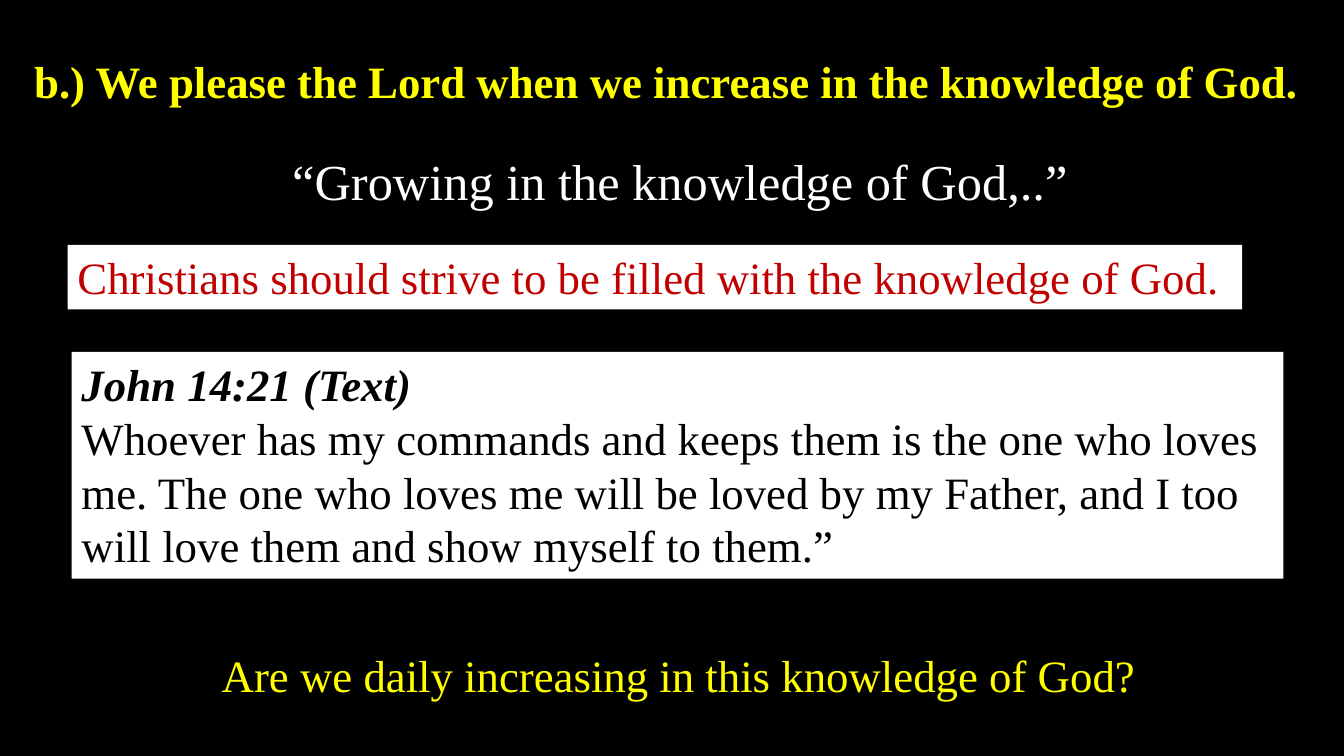
from pptx import Presentation
from pptx import util as u
from pptx.dml.color import RGBColor
from pptx.enum import shapes, text

COLORS = {"black": "000000", "white": "FFFFFF", "yellow": "FFFF00", "red": "C00000"}
FONT = "Times New Roman"


def rgb(name):
    """Return the named colour."""
    return RGBColor.from_string(COLORS[name])


def write(sp, paragraphs, color, wrap, size=32):
    """Fill a shape with left-aligned paragraphs of (wording, font format)."""
    tf = sp.text_frame
    frame = {"word_wrap": wrap, "auto_size": text.MSO_AUTO_SIZE.SHAPE_TO_FIT_TEXT,
             "vertical_anchor": text.MSO_ANCHOR.TOP}
    for key, value in frame.items():
        setattr(tf, key, value)
    for i, (wording, extra) in enumerate(paragraphs):
        p = tf.paragraphs[0] if i == 0 else tf.add_paragraph()
        p.alignment = text.PP_ALIGN.LEFT
        r = p.add_run()
        r.text = wording
        for key, value in {"name": FONT, "size": u.Pt(size), **extra}.items():
            setattr(r.font, key, value)
        r.font.color.rgb = rgb(color)


def add_line(s, box, wording, color, size=32, **extra):
    """Place one unwrapped line of text on the background."""
    sp = s.shapes.add_textbox(*map(u.Inches, box))
    write(sp, [(wording, extra)], color, False, size)


def add_panel(s, box, paragraphs, color):
    """Place a white panel holding wrapped paragraphs."""
    sp = s.shapes.add_shape(shapes.MSO_SHAPE.RECTANGLE, *map(u.Inches, box))
    sp.shadow.inherit = False
    sp.fill.solid()
    sp.fill.fore_color.rgb = rgb("white")
    sp.line.fill.background()
    write(sp, paragraphs, color, True)


def build_verse_slide(prs):
    """Build the slide with heading, quotation, two panels and closing question."""
    s = prs.slides.add_slide(prs.slide_layouts[6])
    s.background.fill.solid()
    s.background.fill.fore_color.rgb = rgb("black")
    add_line(s, (0.24, 0.48, 12.96, 0.64),
             "b.) We please the Lord when we increase in the knowledge of God.",
             "yellow", bold=True)
    add_line(s, (2.8, 1.44, 7.95, 0.71),
             "“Growing in the knowledge of God,..”", "white", 36)
    add_panel(s, (0.67, 2.43, 11.65, 0.64),
              [("Christians should strive to be filled with the knowledge of God.", {})],
              "red")
    add_line(s, (2.1, 6.38, 9.35, 0.64),
             "Are we daily increasing in this knowledge of God?", "yellow")
    add_panel(s, (0.71, 3.49, 12.02, 2.25),
              [("John 14:21 (Text)", {"bold": True, "italic": True}),
               ("Whoever has my commands and keeps them is the one who loves me. "
                "The one who loves me will be loved by my Father, and I too will "
                "love them and show myself to them.”", {})],
              "black")


def main():
    """Create and save the presentation."""
    prs = Presentation()
    prs.slide_width, prs.slide_height = u.Inches(13.33), u.Inches(7.5)
    build_verse_slide(prs)
    prs.save("out.pptx")


if __name__ == "__main__":
    main()
